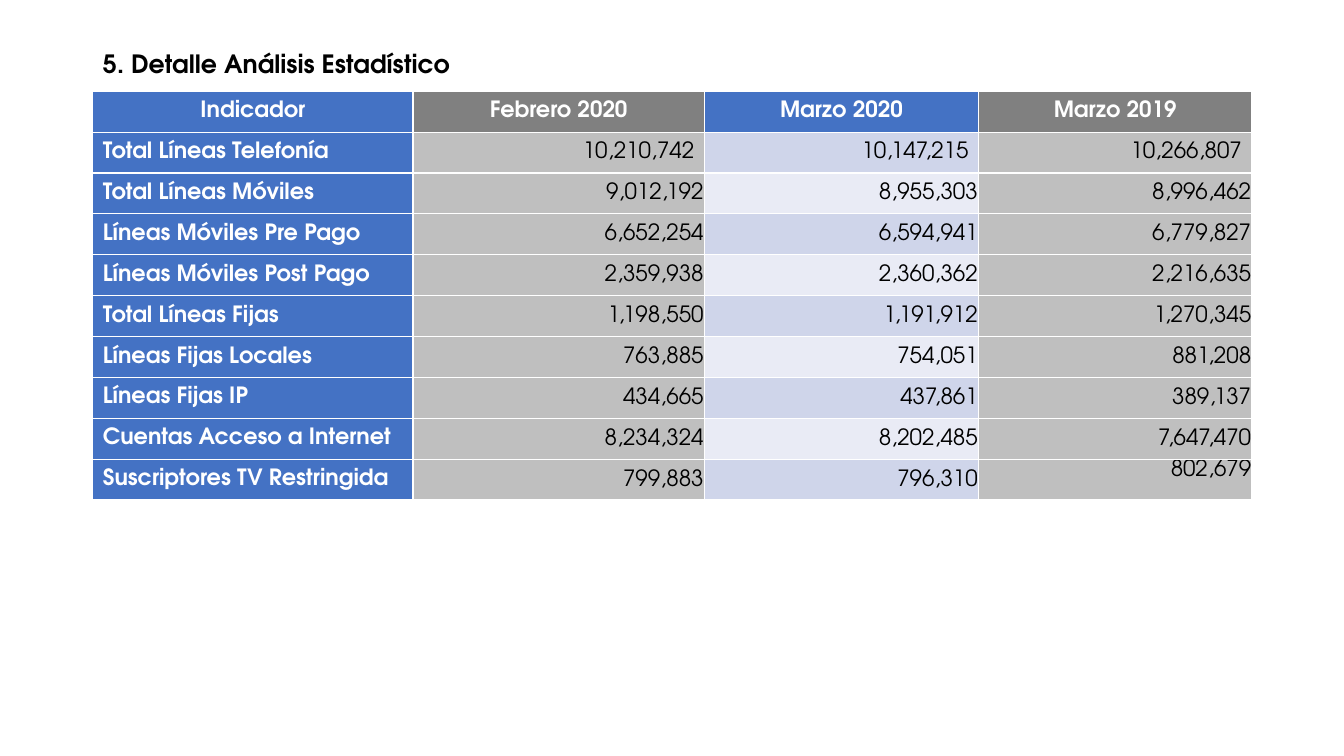
from dataclasses import dataclass

from pptx import Presentation
from pptx.dml.color import RGBColor
from pptx.enum.text import MSO_ANCHOR, MSO_AUTO_SIZE, PP_ALIGN
from pptx.util import Cm, Pt

TITLE = "5. Detalle Análisis Estadístico"
HEADERS = ["Indicador", "Febrero 2020", "Marzo 2020", "Marzo 2019"]
INDICATORS = [
    ("Total Líneas Telefonía", 10210742, 10147215, 10266807),
    ("Total Líneas Móviles", 9012192, 8955303, 8996462),
    ("Líneas Móviles Pre Pago", 6652254, 6594941, 6779827),
    ("Líneas Móviles Post Pago", 2359938, 2360362, 2216635),
    ("Total Líneas Fijas", 1198550, 1191912, 1270345),
    ("Líneas Fijas Locales", 763885, 754051, 881208),
    ("Líneas Fijas IP", 434665, 437861, 389137),
    ("Cuentas Acceso a Internet", 8234324, 8202485, 7647470),
    ("Suscriptores TV Restringida", 799883, 796310, 802679),
]
CURRENT_MONTH = 2  # column of the month being reported


@dataclass(frozen=True)
class Theme:
    font: str = "TeX Gyre Adventor"
    title_size: Pt = Pt(18)
    table_size: Pt = Pt(16)
    text: RGBColor = RGBColor(0, 0, 0)
    inverse: RGBColor = RGBColor(255, 255, 255)
    accent: RGBColor = RGBColor(0x44, 0x72, 0xC4)
    header_grey: RGBColor = RGBColor(0x80, 0x80, 0x80)
    body_grey: RGBColor = RGBColor(0xBF, 0xBF, 0xBF)
    bands: tuple = (RGBColor(0xCF, 0xD5, 0xEA), RGBColor(0xE9, 0xEB, 0xF5))


THEME = Theme()
LEFT, WIDTH = Cm(2.34), Cm(29.21)
TITLE_TOP, TITLE_HEIGHT = Cm(1.02), Cm(1.24)
TABLE_TOP, ROW_HEIGHT = Cm(2.3), Cm(1.03)
COLUMN_WIDTHS = [Cm(8.07), Cm(7.34), Cm(6.91), Cm(6.89)]
TIGHT = Cm(0.02)


def style_text(paragraph, size, color, bold, align):
    paragraph.alignment = align
    font = paragraph.font
    font.name, font.size, font.bold = THEME.font, size, bold
    font.color.rgb = color


def cell_fill(row, column):
    if column == 0 or (row == 0 and column == CURRENT_MONTH):
        return THEME.accent
    if row == 0:
        return THEME.header_grey
    if column == CURRENT_MONTH:
        return THEME.bands[(row - 1) % 2]
    return THEME.body_grey


def fill_cell(cell, row, column, content):
    is_value = row > 0 and column > 0
    cell.text = f"{content:,}" if is_value else content
    cell.vertical_anchor = MSO_ANCHOR.MIDDLE
    cell.fill.solid()
    cell.fill.fore_color.rgb = cell_fill(row, column)
    if row == 0:
        align = PP_ALIGN.CENTER
    else:
        align = PP_ALIGN.RIGHT if is_value else PP_ALIGN.LEFT
    style_text(cell.text_frame.paragraphs[0], THEME.table_size,
               THEME.text if is_value else THEME.inverse, not is_value, align)
    if is_value and row > 1:
        cell.margin_left = cell.margin_right = cell.margin_top = TIGHT
        cell.margin_bottom = 0


def add_title(slide):
    title = slide.shapes.title
    title.left, title.top, title.width, title.height = LEFT, TITLE_TOP, WIDTH, TITLE_HEIGHT
    frame = title.text_frame
    frame.text = TITLE
    frame.auto_size = MSO_AUTO_SIZE.NONE
    frame.vertical_anchor = MSO_ANCHOR.MIDDLE
    heading = frame.paragraphs[0]
    heading.line_spacing = 0.9
    style_text(heading, THEME.title_size, THEME.text, True, PP_ALIGN.LEFT)


def add_indicators(slide):
    rows = [HEADERS, *INDICATORS]
    table = slide.shapes.add_table(len(rows), len(HEADERS), LEFT, TABLE_TOP,
                                   WIDTH, ROW_HEIGHT * len(rows)).table
    for column, width in zip(table.columns, COLUMN_WIDTHS):
        column.width = width
    for r, contents in enumerate(rows):
        for c, content in enumerate(contents):
            fill_cell(table.cell(r, c), r, c, content)
    # The last figure sits at the top of its cell
    table.cell(len(rows) - 1, len(HEADERS) - 1).vertical_anchor = MSO_ANCHOR.TOP


def main():
    deck = Presentation()
    deck.slide_width, deck.slide_height = Cm(33.87), Cm(19.05)
    slide = deck.slides.add_slide(deck.slide_layouts.get_by_name("Title Only"))
    add_title(slide)
    add_indicators(slide)
    deck.save("out.pptx")


if __name__ == "__main__":
    main()
